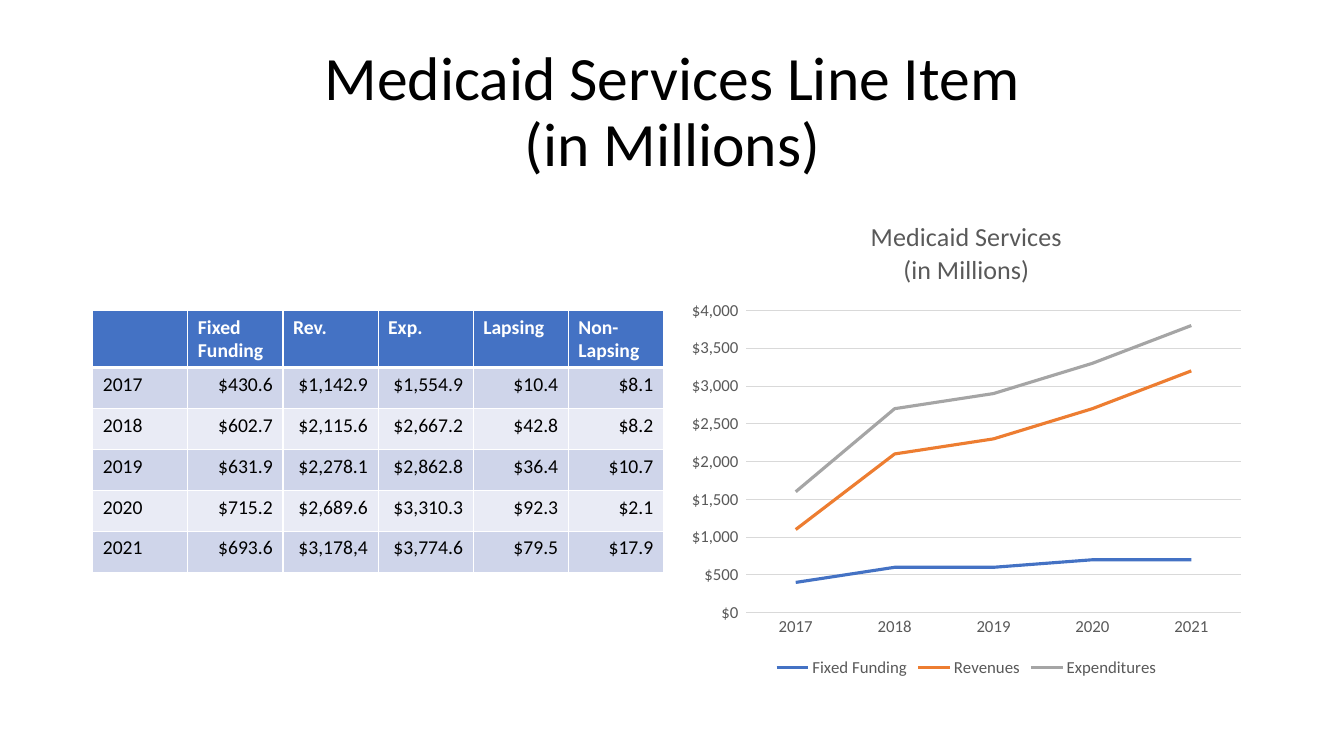
from dataclasses import dataclass

from lxml import etree
from pptx import Presentation
from pptx import util as u
from pptx.chart.data import CategoryChartData
from pptx.dml.color import RGBColor
from pptx.enum import chart as ch, text
from pptx.oxml import parse_xml
from pptx.oxml.ns import nsdecls, qn


@dataclass(frozen=True)
class Theme:
    font: str = "Calibri"
    black: str = "000000"
    white: str = "FFFFFF"
    grey: str = "595959"
    grid: str = "D9D9D9"
    header: str = "4472C4"
    bands: tuple = ("CFD5EA", "E9EBF5")
    series: tuple = ("4472C4", "ED7D31", "A5A5A5")
    title_size: float = 44
    chart_title_size: float = 18.6
    table_size: float = 14
    axis_size: float = 12


T = Theme()
ALIGN = text.PP_ALIGN

HEADINGS = ("", "Fixed Funding", "Rev.", "Exp.", "Lapsing", "Non-Lapsing")
ROWS = (
    ("2017", "$430.6", "$1,142.9", "$1,554.9", "$10.4", "$8.1"),
    ("2018", "$602.7", "$2,115.6", "$2,667.2", "$42.8", "$8.2"),
    ("2019", "$631.9", "$2,278.1", "$2,862.8", "$36.4", "$10.7"),
    ("2020", "$715.2", "$2,689.6", "$3,310.3", "$92.3", "$2.1"),
    ("2021", "$693.6", "$3,178,4", "$3,774.6", "$79.5", "$17.9"),
)
SERIES = {
    "Fixed Funding": (400, 600, 600, 700, 700),
    "Revenues": (1100, 2100, 2300, 2700, 3200),
    "Expenditures": (1600, 2700, 2900, 3300, 3800),
}


def rgb(color):
    return RGBColor.from_string(color)


def style_font(font, size, color, bold=False):
    font.name, font.size, font.bold = T.font, u.Pt(size), bold
    font.color.rgb = rgb(color)


def write(tf, content, size, color, bold=False, align=None, spacing=None):
    """Fill a text frame: \\n starts a paragraph, \\v breaks a line."""
    for i, line in enumerate(content.split("\n")):
        p = tf.add_paragraph() if i else tf.paragraphs[0]
        for j, part in enumerate(line.split("\v")):
            if j:
                p.add_line_break()
            r = p.add_run()
            r.text = part
            style_font(r.font, size, color, bold)
        if align is not None:
            p.alignment = align
        if spacing:
            p.line_spacing = spacing


def add_title(s, x, y, w, h):
    tf = s.shapes.add_textbox(*map(u.Inches, (x, y, w, h))).text_frame
    tf.word_wrap = True
    tf.vertical_anchor = text.MSO_ANCHOR.MIDDLE
    write(tf, "Medicaid Services Line Item\v(in Millions)", T.title_size,
          T.black, align=ALIGN.CENTER, spacing=0.9)


def set_borders(cell, bottom, top):
    tc_pr = cell._tc.get_or_add_tcPr()
    widths = {"L": 1, "R": 1, "T": top, "B": bottom}
    for i, (side, width) in enumerate(widths.items()):
        tc_pr.insert(i, parse_xml(
            f'<a:ln{side} {nsdecls("a")} w="{u.Pt(width)}"><a:solidFill>'
            f'<a:srgbClr val="{T.white}"/></a:solidFill></a:ln{side}>'))


def add_funding_table(s, x, y, w, h, header_h):
    grid = (HEADINGS, *ROWS)
    row_h = (h - header_h) / len(ROWS)
    table = s.shapes.add_table(len(grid), len(HEADINGS),
                               *map(u.Inches, (x, y, w, h))).table
    for column in table.columns:
        column.width = u.Inches(w / len(HEADINGS))
    for i, values in enumerate(grid):
        head = i == 0
        table.rows[i].height = u.Inches(header_h if head else row_h)
        for j, value in enumerate(values):
            cell = table.cell(i, j)
            cell.fill.solid()
            cell.fill.fore_color.rgb = rgb(
                T.header if head else T.bands[(i - 1) % 2])
            set_borders(cell, bottom=3 if head else 1, top=3 if i == 1 else 1)
            if value:
                write(cell.text_frame, value, T.table_size,
                      T.white if head else T.black, bold=head,
                      align=ALIGN.LEFT if head or j == 0 else ALIGN.RIGHT)


def place_plot(chart, **fractions):
    """Fix the inner plot area, in fractions of the chart."""
    area = chart._chartSpace.chart.plotArea
    for old in area.findall(qn("c:layout")):
        area.remove(old)
    layout = parse_xml(f'<c:layout {nsdecls("c")}><c:manualLayout/></c:layout>')
    settings = {"layoutTarget": "inner", "xMode": "edge", "yMode": "edge",
                **fractions}
    for tag, value in settings.items():
        etree.SubElement(layout[0], qn(f"c:{tag}")).set("val", str(value))
    area.insert(0, layout)


def style_line(line, color, width):
    line.color.rgb = rgb(color)
    line.width = u.Pt(width)


def add_trend_chart(s, x, y, w, h):
    data = CategoryChartData(number_format='"$"#,##0')
    data.categories = [row[0] for row in ROWS]
    for name, values in SERIES.items():
        data.add_series(name, values)
    chart = s.shapes.add_chart(ch.XL_CHART_TYPE.LINE,
                               *map(u.Inches, (x, y, w, h)), data).chart
    style_font(chart.font, T.axis_size, T.grey)
    chart.has_title = True
    write(chart.chart_title.text_frame, "Medicaid Services\n(in Millions)",
          T.chart_title_size, T.grey)
    chart.chart_title.include_in_layout = False
    chart.has_legend = True
    chart.legend.position = ch.XL_LEGEND_POSITION.BOTTOM
    chart.legend.include_in_layout = False
    style_font(chart.legend.font, T.axis_size, T.grey)
    place_plot(chart, x=0.115, y=0.227, w=0.865, h=0.63)

    for axis in (chart.category_axis, chart.value_axis):
        axis.major_tick_mark = axis.minor_tick_mark = ch.XL_TICK_MARK.NONE
        style_font(axis.tick_labels.font, T.axis_size, T.grey)
    style_line(chart.category_axis.format.line, T.grid, 0.75)
    amounts = chart.value_axis
    amounts.format.line.fill.background()
    amounts.minimum_scale, amounts.maximum_scale = 0, 4000
    amounts.major_unit = 500
    amounts.tick_labels.number_format = '"$"#,##0_)'
    amounts.tick_labels.number_format_is_linked = False
    style_line(amounts.major_gridlines.format.line, T.grid, 0.75)

    plot = chart.plots[0]
    plot.vary_by_categories = False
    for series, color in zip(plot.series, T.series):
        series.smooth = False
        series.marker.style = ch.XL_MARKER_STYLE.NONE
        style_line(series.format.line, color, 2.25)


def main():
    prs = Presentation()
    prs.slide_width, prs.slide_height = u.Inches(13.33), u.Inches(7.5)
    s = prs.slides.add_slide(prs.slide_layouts[6])
    add_title(s, 0.92, 0.4, 11.5, 1.45)
    add_funding_table(s, 0.92, 3.08, 5.66, 2.59, header_h=0.56)
    add_trend_chart(s, 6.75, 2, 5.67, 4.76)
    prs.save("out.pptx")


if __name__ == "__main__":
    main()
